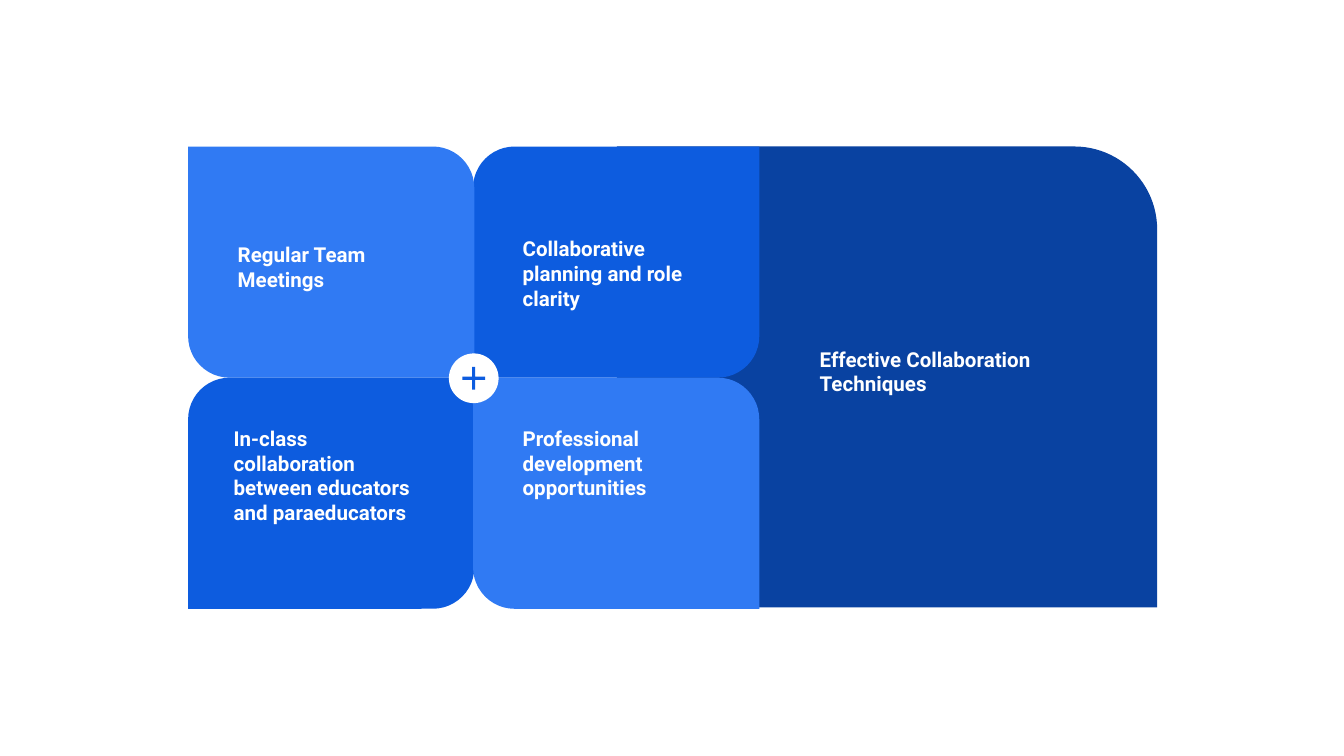
"""Build a slide of four collaboration practices that add up to effective techniques."""
import pptx
import pptx.dml.color
import pptx.enum.shapes
import pptx.enum.text
import pptx.util

Inches = pptx.util.Inches
MSO_SHAPE = pptx.enum.shapes.MSO_SHAPE
NAVY = pptx.dml.color.RGBColor(0x09, 0x42, 0xA1)
BLUE = pptx.dml.color.RGBColor(0x0D, 0x5C, 0xDF)
LIGHT_BLUE = pptx.dml.color.RGBColor(0x30, 0x7A, 0xF3)
WHITE = pptx.dml.color.RGBColor(0xFF, 0xFF, 0xFF)

LEFT, TOP = 1.4, 1.09
TILE_WIDTH, TILE_HEIGHT = 2.13, 1.72
COLUMN_STEP = 2.12
ROUNDING = 0.18

deck = pptx.Presentation()
deck.slide_width = Inches(10)
deck.slide_height = Inches(10 * 9 / 16)
slide = deck.slides.add_slide(deck.slide_layouts[6])


def add_panel(preset, left, top, width, height, color, adjustments=()):
    panel = slide.shapes.add_shape(
        preset, Inches(left), Inches(top), Inches(width), Inches(height))
    panel.shadow.inherit = False
    panel.fill.solid()
    panel.fill.fore_color.rgb = color
    panel.line.fill.background()
    for index, value in enumerate(adjustments):
        panel.adjustments[index] = value


def add_label(words, left, top, width, height):
    label = slide.shapes.add_textbox(
        Inches(left), Inches(top), Inches(width), Inches(height))
    frame = label.text_frame
    frame.word_wrap = True
    frame.vertical_anchor = pptx.enum.text.MSO_ANCHOR.TOP
    frame.margin_left = frame.margin_right = Inches(0.1)
    frame.margin_top = frame.margin_bottom = Inches(0.1)
    run = frame.paragraphs[0].add_run()
    run.text = words
    run.font.name = "Roboto"
    run.font.size = pptx.util.Pt(11)
    run.font.bold = True
    run.font.color.rgb = WHITE


add_panel(MSO_SHAPE.ROUND_2_DIAG_RECTANGLE, 4.59, TOP, 4.02, 3.43,
          NAVY, (0, ROUNDING))
add_label("Effective Collaboration Techniques", 6, 2.48, 2.21, 0.66)

practices = [
    (1, 0, "Collaborative planning and role clarity", 3.79, 1.66),
    (0, 0, "Regular Team Meetings", 1.67, 1.7),
    (0, 1, "In-class collaboration between educators and paraeducators", 1.64, 3.07),
    (1, 1, "Professional development opportunities", 3.79, 3.07),
]
for column, row, practice, label_left, label_top in practices:
    if column == row:
        color, corners = LIGHT_BLUE, (0, ROUNDING)
    else:
        color, corners = BLUE, (ROUNDING, 0)
    add_panel(MSO_SHAPE.ROUND_2_DIAG_RECTANGLE,
              LEFT + column * COLUMN_STEP, TOP + row * TILE_HEIGHT,
              TILE_WIDTH, TILE_HEIGHT, color, corners)
    add_label(practice, label_left, label_top, 1.59, 0.5)

add_panel(MSO_SHAPE.OVAL, 3.34, 2.63, 0.37, 0.37, WHITE)
add_panel(MSO_SHAPE.MATH_PLUS, 3.41, 2.7, 0.23, 0.23, BLUE, (0.1,))

deck.save("out.pptx")
